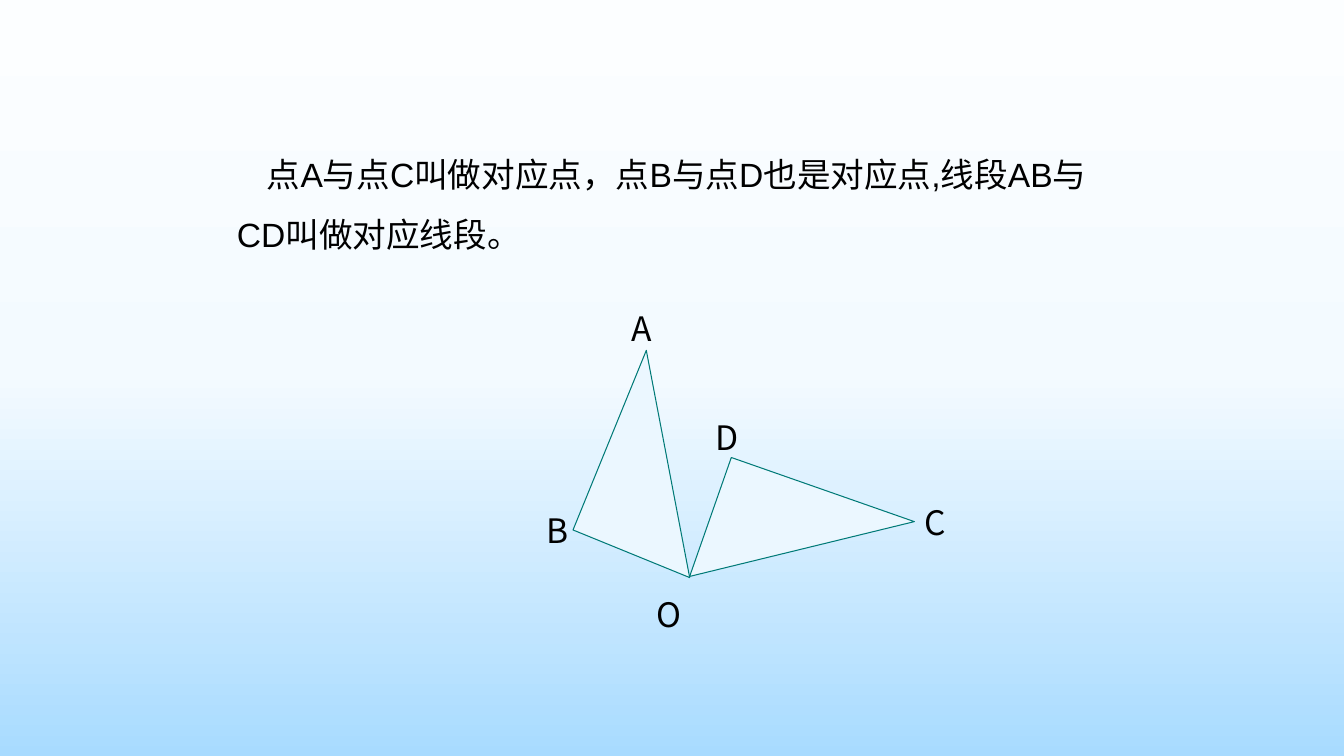
from copy import deepcopy

from pptx import Presentation
from pptx import util as u
from pptx.dml.color import RGBColor
from pptx.enum import shapes, text
from pptx.oxml import ns

BLACK = RGBColor(0x00, 0x00, 0x00)
TEAL = RGBColor(0x00, 0x7A, 0x77)
PALE_BLUE = RGBColor(0xEB, 0xF7, 0xFF)
SKY = [
    (0, RGBColor(0xFC, 0xFE, 0xFF)),
    (0.5, RGBColor(0xF3, 0xFA, 0xFF)),
    (1, RGBColor(0xA8, 0xDB, 0xFF)),
]
LATIN_FONT = "Arial"
CHINESE_FONT = "Noto Sans CJK SC"
SLIDE_WIDTH, SLIDE_HEIGHT = 1344, 756
EMU_PER_PX = 12192000 / SLIDE_WIDTH

STATEMENT = "点A与点C叫做对应点，点B与点D也是对应点,线段AB与CD叫做对应线段。"
TRIANGLES = [(739, 452, 109.3), (605, 367, 22.2)]
VERTICES = [
    ("A", 622, 308, 50),
    ("B", 537, 510, 42),
    ("O", 647, 594, 58),
    ("D", 706, 417, 50),
    ("C", 915, 502, 42),
]


def px(length):
    return u.Emu(round(length * EMU_PER_PX))


def write_text(frame, content, font=LATIN_FONT, size=24, color=BLACK, line_spacing=None, indent=0):
    paragraph = frame.paragraphs[0]
    paragraph.line_spacing = line_spacing
    if indent:
        properties = paragraph._p.get_or_add_pPr()
        properties.set("marL", "0")
        properties.set("indent", str(px(indent)))
    run = paragraph.add_run()
    run.text = content
    run.font.name = font
    run.font.size = u.Pt(size)
    run.font.color.rgb = color
    east_asian = run.font._element.makeelement(ns.qn("a:ea"), {"typeface": CHINESE_FONT})
    run.font._element.find(ns.qn("a:latin")).addnext(east_asian)


class GeometrySlide:
    def __init__(self, presentation):
        self.slide = presentation.slides.add_slide(presentation.slide_layouts[6])
        self.fill = PALE_BLUE
        self.line = TEAL
        self.line_width = u.Pt(0.75)

    def background(self, colors):
        fill = self.slide.background.fill
        fill.gradient()
        fill.gradient_angle = 270
        stops = self.slide.element.find(".//" + ns.qn("a:gsLst"))
        stops.append(deepcopy(stops[0]))
        for stop, (position, color) in zip(fill.gradient_stops, colors):
            stop.position = position
            stop.color.rgb = color

    def textbox(self, content, left, top, width, height,
                anchor=text.MSO_ANCHOR.TOP, margin=0, **style):
        box = self.slide.shapes.add_textbox(px(left), px(top), px(width), px(height))
        frame = box.text_frame
        frame.word_wrap = True
        frame.vertical_anchor = anchor
        frame.margin_top = frame.margin_bottom = px(margin)
        write_text(frame, content, **style)

    def triangle(self, left, top, width, height, rotation):
        shape = self.slide.shapes.add_shape(
            shapes.MSO_SHAPE.RIGHT_TRIANGLE, px(left), px(top), px(width), px(height))
        shape.rotation = rotation
        shape.shadow.inherit = False
        shape.fill.solid()
        shape.fill.fore_color.rgb = self.fill
        shape.line.color.rgb = self.line
        shape.line.width = self.line_width


def main():
    presentation = Presentation()
    presentation.slide_width = px(SLIDE_WIDTH)
    presentation.slide_height = px(SLIDE_HEIGHT)
    page = GeometrySlide(presentation)
    page.background(SKY)
    page.textbox(STATEMENT, 227, 120, 907, 148, anchor=text.MSO_ANCHOR.MIDDLE,
                 margin=5, line_spacing=1.5, indent=30)
    for left, top, rotation in TRIANGLES:
        page.triangle(left, top, 126, 194, rotation)
    for letter, left, top, width in VERTICES:
        page.textbox(letter, left, top, width, 50, font=CHINESE_FONT)
    presentation.save("out.pptx")


if __name__ == "__main__":
    main()
